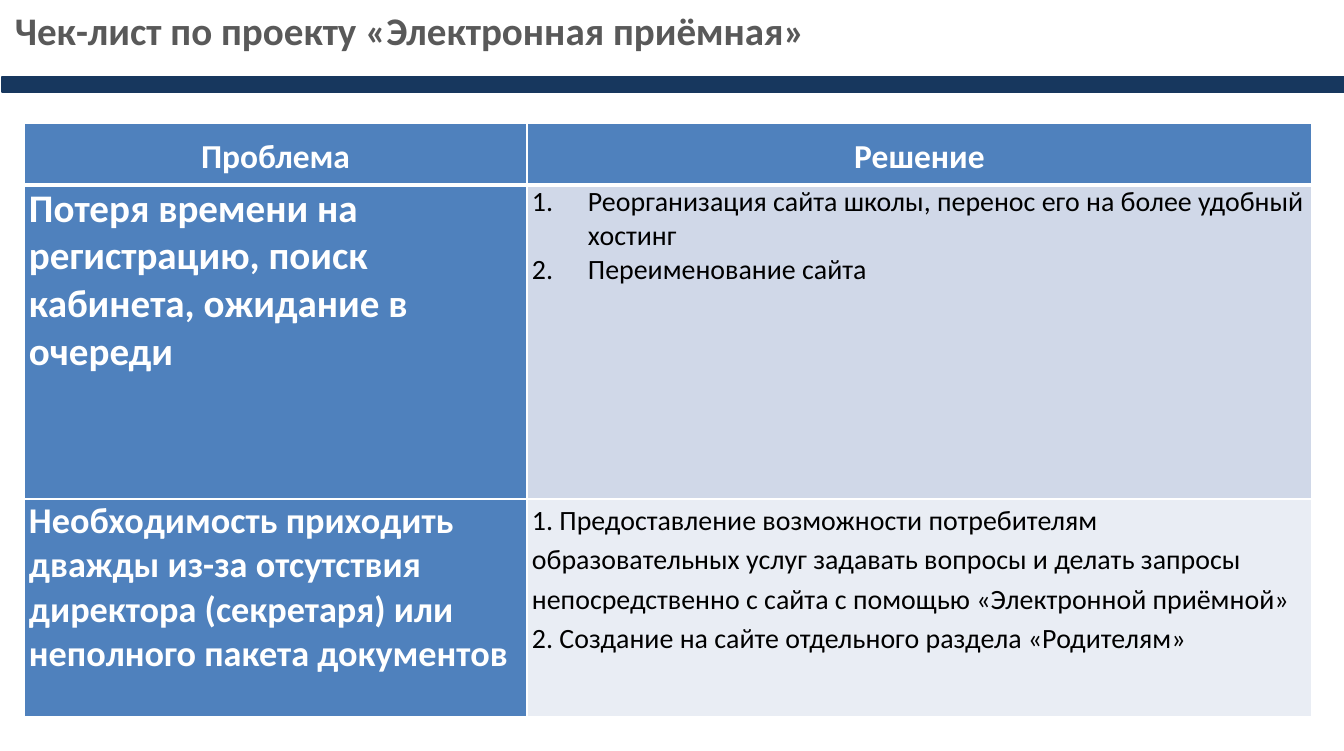
from lxml import etree
from pptx import Presentation
from pptx import util as u
from pptx.dml.color import RGBColor
from pptx.enum import shapes, text
from pptx.oxml.ns import qn

EMU_PER_PX = 9108
WHITE, BLACK, GRAY = "FFFFFF", "000000", "595959"
NAVY, BLUE, BAND_DARK, BAND_LIGHT = "17375E", "4F81BD", "D0D8E8", "E9EDF4"
COLUMNS = [503, 785]
ROWS = [62, 314, 218]


def px(length):
    return u.Emu(length * EMU_PER_PX)


def color(value):
    return RGBColor.from_string(value)


def style_para(para, size, ink, bold, spacing=1.0, align=text.PP_ALIGN.LEFT):
    para.alignment = align
    para.line_spacing = spacing
    font = para.font
    font.name = "Calibri"
    font.size = u.Pt(size)
    font.bold = bold
    font.color.rgb = color(ink)


def number_para(para, indent):
    properties = para._p.get_or_add_pPr()
    properties.set("marL", str(px(indent)))
    properties.set("indent", str(-px(indent)))
    etree.SubElement(properties, qn("a:buFont"), typeface="+mj-lt")
    etree.SubElement(properties, qn("a:buAutoNum"), type="arabicPeriod")


def add_title(page, wording):
    box = page.shapes.add_textbox(px(5), px(2), px(1170), px(57))
    frame = box.text_frame
    frame.word_wrap = True
    para = frame.paragraphs[0]
    para.text = wording
    style_para(para, 28, GRAY, True)


def add_bar(page):
    bar = page.shapes.add_shape(
        shapes.MSO_SHAPE.RECTANGLE, px(2), px(77), px(1344), px(15))
    bar.shadow.inherit = False
    bar.fill.solid()
    bar.fill.fore_color.rgb = color(NAVY)
    bar.line.color.rgb = color(NAVY)
    bar.line.width = u.Pt(2)


def set_borders(cell, top, bottom):
    properties = cell._tc.get_or_add_tcPr()
    for side, width in (("L", 1), ("R", 1), ("T", top), ("B", bottom)):
        line = etree.SubElement(properties, qn("a:ln" + side), w=str(u.Pt(width)))
        fill = etree.SubElement(line, qn("a:solidFill"))
        etree.SubElement(fill, qn("a:srgbClr"), val=WHITE)


def fill_cell(cell, lines, fill, numbered=False, top=1, bottom=1, **style):
    set_borders(cell, top, bottom)
    cell.fill.solid()
    cell.fill.fore_color.rgb = color(fill)
    cell.margin_left = cell.margin_right = px(5)
    cell.margin_top = cell.margin_bottom = 0
    frame = cell.text_frame
    for index, line in enumerate(lines):
        para = frame.add_paragraph() if index else frame.paragraphs[0]
        para.text = line
        if numbered:
            para.line_spacing = 1.0
            number_para(para, 56)
        style_para(para, **style)


def add_checklist(page):
    frame = page.shapes.add_table(
        len(ROWS), len(COLUMNS), px(24), px(123), px(sum(COLUMNS)), px(sum(ROWS)))
    table = frame.table
    table.first_col = True
    table.horz_banding = False
    for column, width in zip(table.columns, COLUMNS):
        column.width = px(width)
    for row, height in zip(table.rows, ROWS):
        row.height = px(height)

    for index, heading in enumerate(["Проблема", "Решение"]):
        cell = table.cell(0, index)
        fill_cell(cell, [heading], BLUE, bottom=3, size=24, ink=WHITE,
                  bold=True, spacing=1.15, align=text.PP_ALIGN.CENTER)
        cell.vertical_anchor = text.MSO_ANCHOR.MIDDLE

    fill_cell(table.cell(1, 0), [
        "Потеря времени на регистрацию, поиск кабинета, ожидание в очереди",
    ], BLUE, top=3, size=28, ink=WHITE, bold=True)
    fill_cell(table.cell(1, 1), [
        "Реорганизация сайта школы, перенос его на более удобный хостинг",
        "Переименование сайта",
    ], BAND_DARK, numbered=True, top=3, size=20, ink=BLACK, bold=False)
    fill_cell(table.cell(2, 0), [
        "Необходимость приходить дважды из-за отсутствия директора "
        "(секретаря) или неполного пакета документов",
    ], BLUE, size=26, ink=WHITE, bold=True)
    fill_cell(table.cell(2, 1), [
        "1. Предоставление возможности потребителям образовательных услуг "
        "задавать вопросы и делать запросы непосредственно с сайта "
        "с помощью «Электронной приёмной»",
        "2. Создание на сайте отдельного раздела «Родителям»",
    ], BAND_LIGHT, size=20, ink=BLACK, bold=False, spacing=1.15)


def main():
    deck = Presentation()
    deck.slide_width = px(1344)
    deck.slide_height = px(751)
    page = deck.slides.add_slide(deck.slide_layouts[6])
    add_title(page, "Чек-лист по проекту «Электронная приёмная»")
    add_checklist(page)
    add_bar(page)
    deck.save("out.pptx")


if __name__ == "__main__":
    main()
